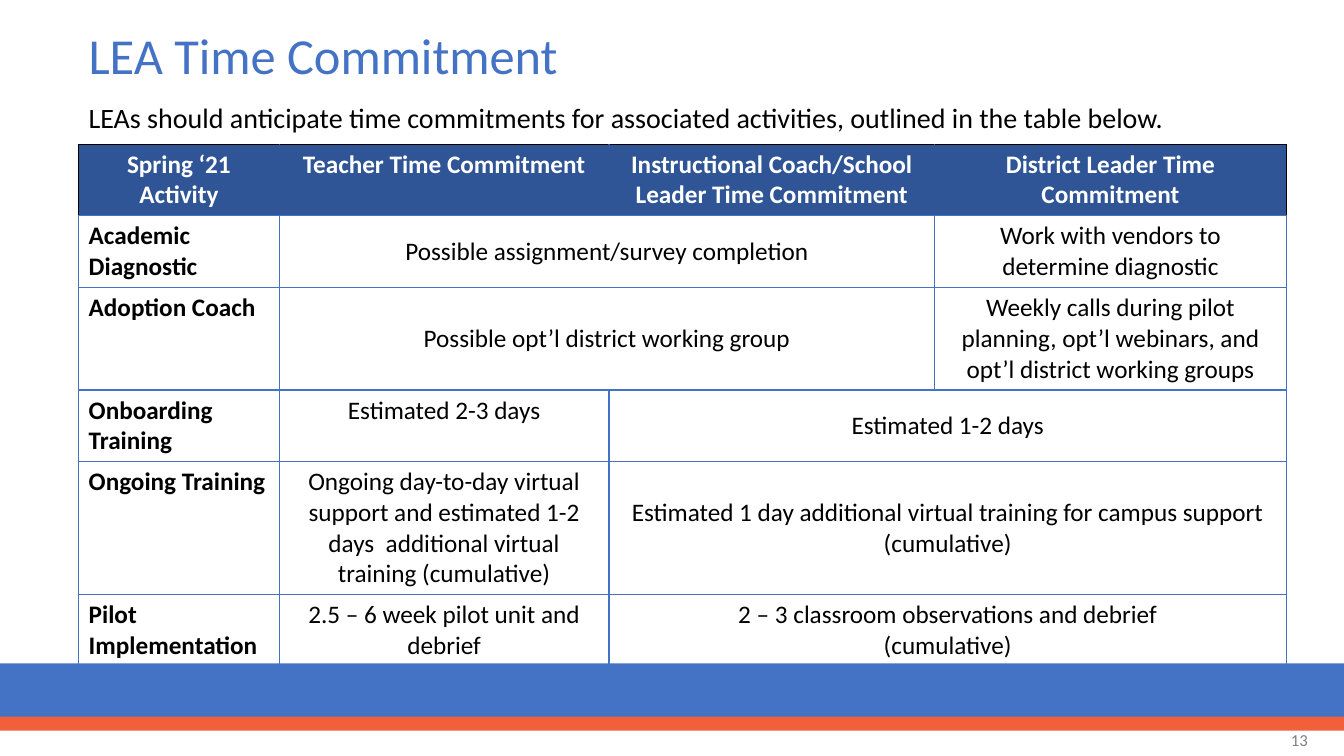
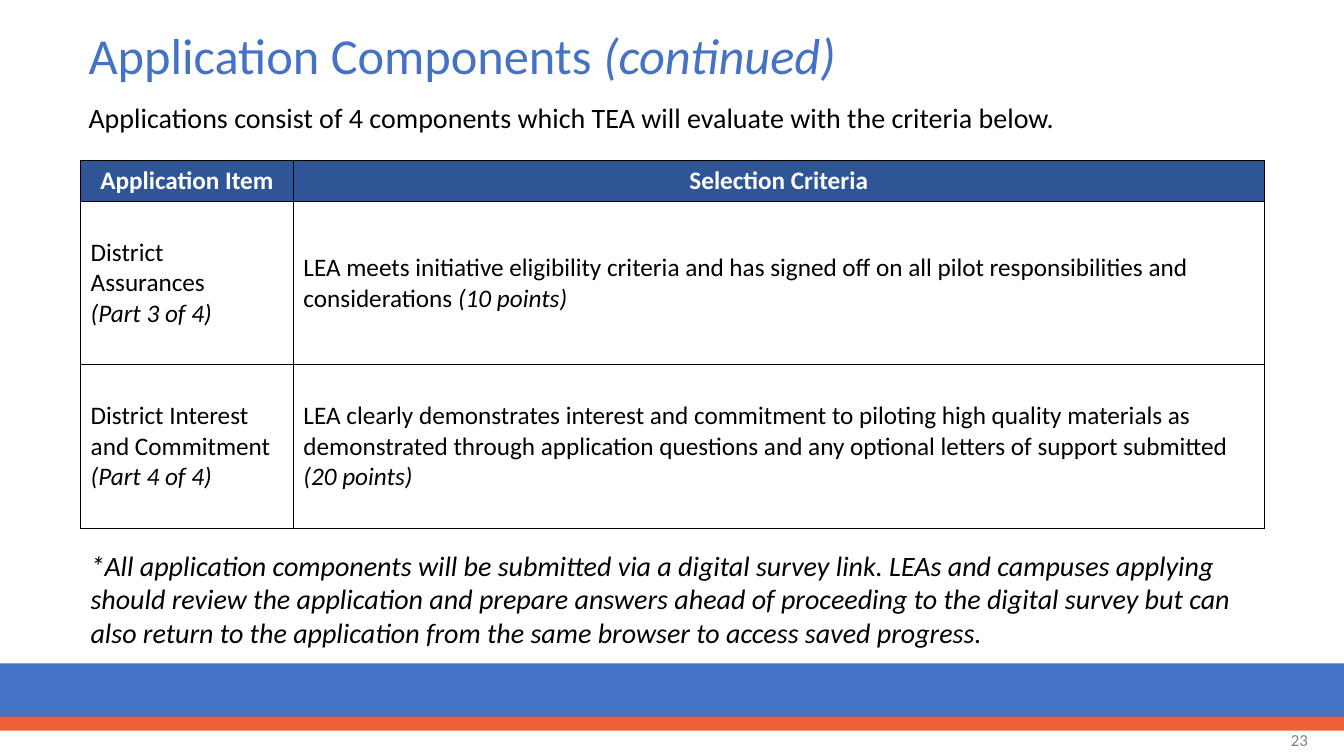
from dataclasses import dataclass
from lxml.etree import SubElement
from pptx import Presentation
from pptx.dml.color import RGBColor
from pptx.enum.shapes import MSO_SHAPE
from pptx.enum.text import MSO_ANCHOR, PP_ALIGN
from pptx.oxml.ns import qn
from pptx.util import Inches, Pt


@dataclass(frozen=True)
class Theme:
    font: str = "Calibri"
    blue: str = "4472C4"
    navy: str = "2F5597"
    orange: str = "F16038"
    gray: str = "808080"
    black: str = "000000"
    white: str = "FFFFFF"
    title: int = 36
    body: int = 20
    cell: int = 18
    number: int = 12


theme = Theme()
LEFT, CENTER, RIGHT = PP_ALIGN.LEFT, PP_ALIGN.CENTER, PP_ALIGN.RIGHT
TOP, MIDDLE = MSO_ANCHOR.TOP, MSO_ANCHOR.MIDDLE


def write(frame, text, size, color, align=LEFT, anchor=TOP, bold=False, spacing=None):
    """Lines become paragraphs; text between bars is italic."""
    frame.word_wrap = True
    frame.vertical_anchor = anchor
    for row, line in enumerate(text.split("\n")):
        para = frame.paragraphs[0] if row == 0 else frame.add_paragraph()
        para.alignment = align
        para.line_spacing = spacing
        para.font.name = theme.font
        para.font.size = Pt(size)
        para.font.bold = bold
        para.font.color.rgb = RGBColor.from_string(color)
        for part, words in enumerate(line.split("|")):
            if words:
                run = para.add_run()
                run.text = words
                run.font.italic = part % 2 == 1


def edge(cell, side, color, width):
    line = SubElement(cell._tc.get_or_add_tcPr(), qn(f"a:ln{side}"), w=str(Pt(width)))
    fill = SubElement(line, qn("a:solidFill"))
    SubElement(fill, qn("a:srgbClr"), val=color)


slides = [
    {
        "number": "13",
        "title": "LEA Time Commitment",
        "intro": "LEAs should anticipate time commitments for associated activities, outlined in the table below.",
        "place": (0.78, 1.43),
        "cols": [1.99, 3.27, 3.23, 3.49],
        "rows": [0.71, 0.71, 1.02, 0.71, 1.32, 0.71],
        "line": theme.blue,
        "inner": theme.navy,
        "outer": 0.5,
        "labels": True,
        "align": CENTER,
        "top": [(3, 1)],
        "cells": [
            ["Spring ‘21 Activity", "Teacher Time Commitment",
             "Instructional Coach/School Leader Time Commitment", "District Leader Time Commitment"],
            ["Academic Diagnostic", "Possible assignment/survey completion", None,
             "Work with vendors to determine diagnostic"],
            ["Adoption Coach", "Possible opt’l district working group", None,
             "Weekly calls during pilot planning, opt’l webinars, and opt’l district working groups"],
            ["Onboarding Training", "Estimated 2-3 days", "Estimated 1-2 days", None],
            ["Ongoing Training",
             "Ongoing day-to-day virtual support and estimated 1-2 days  additional virtual training (cumulative)",
             "Estimated 1 day additional virtual training for campus support (cumulative)", None],
            ["Pilot Implementation", "2.5 – 6 week pilot unit and debrief",
             "2 – 3 classroom observations and debrief\n(cumulative)", None],
        ],
        "notes": [],
    },
    {
        "number": "23",
        "title": "Application Components |(continued)|",
        "intro": "Applications consist of 4 components which TEA will evaluate with the criteria below.",
        "place": (0.8, 1.59),
        "cols": [2.11, 9.63],
        "rows": [0.41, 1.62, 1.62],
        "line": theme.black,
        "inner": theme.black,
        "outer": 1,
        "labels": False,
        "align": LEFT,
        "top": [],
        "cells": [
            ["Application Item", "Selection Criteria"],
            ["District Assurances\n|(Part 3 of 4)|",
             "LEA meets initiative eligibility criteria and has signed off on all pilot responsibilities "
             "and considerations |(10 points)|"],
            ["District Interest and Commitment |(Part 4 of 4)|",
             "LEA clearly demonstrates interest and commitment to piloting high quality materials as "
             "demonstrated through application questions and any optional letters of support submitted "
             "|(20 points)|"],
        ],
        "notes": [
            "|*All application components will be submitted via a digital survey link. LEAs and campuses "
            "applying should review the application and prepare answers ahead of proceeding to the digital "
            "survey but can also return to the application from the same browser to access saved progress.|"
        ],
    },
]

deck = Presentation()
deck.slide_width = Inches(13.33)
deck.slide_height = Inches(7.5)

for page in slides:
    slide = deck.slides.add_slide(deck.slide_layouts[6])
    shapes = slide.shapes

    for top, height, color in [(6.58, 0.58, theme.blue), (7.11, 0.14, theme.orange)]:
        band = shapes.add_shape(MSO_SHAPE.RECTANGLE, 0, Inches(top), deck.slide_width, Inches(height))
        band.shadow.inherit = False
        band.fill.solid()
        band.fill.fore_color.rgb = RGBColor.from_string(color)
        band.line.fill.background()

    title = shapes.add_textbox(Inches(0.78), Inches(0.17), Inches(12.16), Inches(0.82))
    write(title.text_frame, page["title"], theme.title, theme.blue, anchor=MIDDLE, spacing=0.9)
    intro = shapes.add_textbox(Inches(0.78), Inches(0.95), Inches(11.14), Inches(0.44))
    write(intro.text_frame, page["intro"], theme.body, theme.black)
    number = shapes.add_textbox(Inches(10.07), Inches(7.14), Inches(3), Inches(0.4))
    write(number.text_frame, page["number"], theme.number, theme.gray, RIGHT, MIDDLE)

    cols, rows = page["cols"], page["rows"]
    left, top = page["place"]
    table = shapes.add_table(len(rows), len(cols), Inches(left), Inches(top),
                             Inches(sum(cols)), Inches(sum(rows))).table
    table.horz_banding = False
    for col, width in enumerate(cols):
        table.columns[col].width = Inches(width)
    for row, height in enumerate(rows):
        table.rows[row].height = Inches(height)

    for row, texts in enumerate(page["cells"]):
        head = row == 0
        for col, text in enumerate(texts):
            cell = table.cell(row, col)
            sides = {side: (page["line"], 1) for side in "LRTB"}
            if head:
                rim = (theme.black, page["outer"])
                sides["L"] = rim if col == 0 else (page["inner"], 1)
                sides["R"] = rim if col == len(cols) - 1 else (page["inner"], 1)
                sides["T"] = rim
            for side, (color, width) in sides.items():
                edge(cell, side, color, width)
            if head:
                cell.fill.solid()
                cell.fill.fore_color.rgb = RGBColor.from_string(theme.navy)
            else:
                cell.fill.background()
            if text is None:
                table.cell(row, col - 1).merge(cell)
                continue
            label = page["labels"] and col == 0
            align = CENTER if head else LEFT if label else page["align"]
            high = head or label or (row, col) in page["top"]
            write(cell.text_frame, text, theme.cell, theme.white if head else theme.black,
                  align, bold=head or label)
            cell.vertical_anchor = TOP if high else MIDDLE

    for text in page["notes"]:
        note = shapes.add_textbox(Inches(0.8), Inches(5.39), Inches(11.73), Inches(1.11))
        write(note.text_frame, text, theme.body, theme.black)

deck.save("out.pptx")
